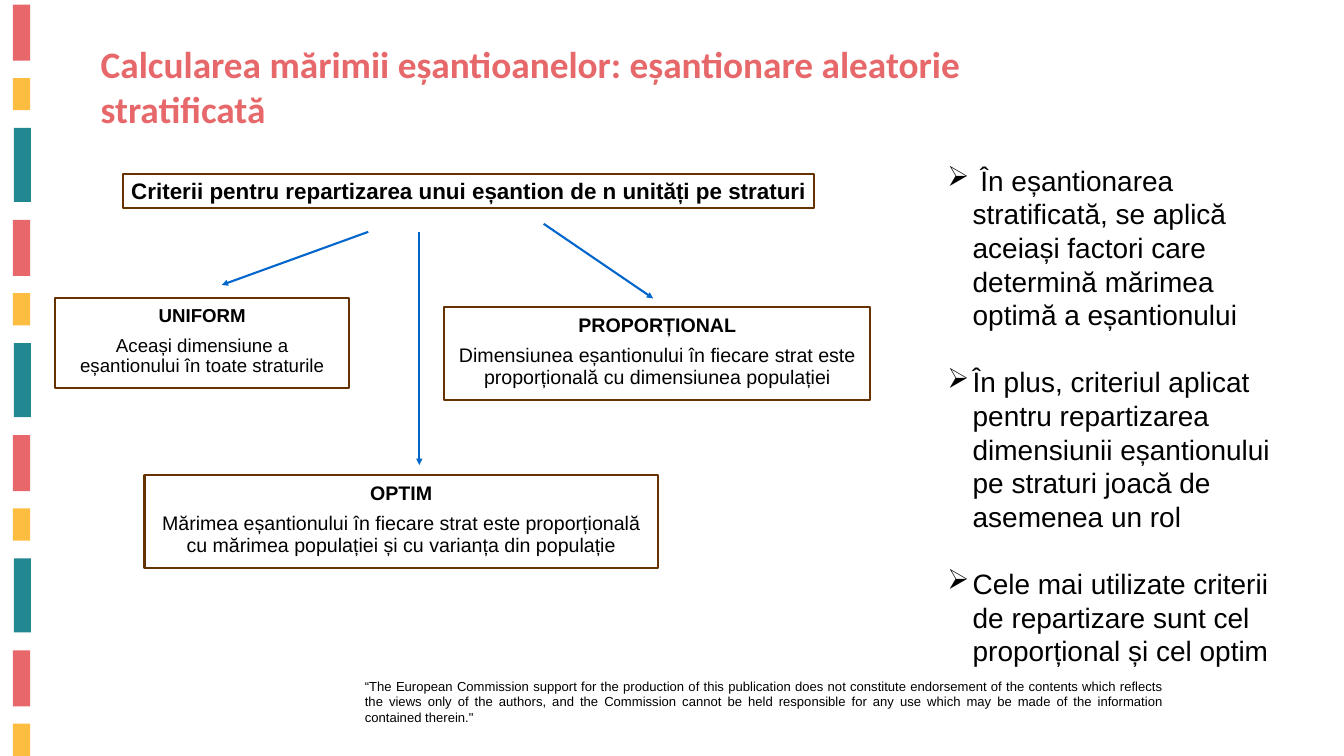
"""Build the slide on sample sizes for stratified random sampling."""
import pptx
import pptx.chart.data
import pptx.dml.color
import pptx.enum.shapes
import pptx.enum.text
import pptx.oxml
import pptx.util
from lxml import etree

Pt = pptx.util.Pt
RGBColor = pptx.dml.color.RGBColor
ALIGN = pptx.enum.text.PP_ALIGN
RECTANGLE = pptx.enum.shapes.MSO_SHAPE.RECTANGLE
A = "{http://schemas.openxmlformats.org/drawingml/2006/main}"

BLACK = RGBColor(0, 0, 0)
CORAL = RGBColor(0xE8, 0x67, 0x6A)
TITLE_CORAL = RGBColor(0xE7, 0x68, 0x6A)
YELLOW = RGBColor(0xFD, 0xBD, 0x40)
TEAL = RGBColor(0x23, 0x87, 0x91)
BROWN = RGBColor(0x66, 0x33, 0x00)
BLUE = RGBColor(0x00, 0x66, 0xCC)


def write(shape, paragraphs, size, font="Arial", color=BLACK, align=ALIGN.LEFT,
          bold_first=False, spacing=None, gap=0, inset=(7.2, 3.6), wrap=True, bullet=None):
    frame = shape.text_frame
    frame.word_wrap = wrap
    frame.vertical_anchor = pptx.enum.text.MSO_ANCHOR.TOP
    frame.margin_left = frame.margin_right = Pt(inset[0])
    frame.margin_top = frame.margin_bottom = Pt(inset[1])
    for index, text in enumerate(paragraphs):
        paragraph = frame.add_paragraph() if index else frame.paragraphs[0]
        paragraph.text = text
        paragraph.alignment = align
        if spacing:
            paragraph.line_spacing = spacing
        if index:
            paragraph.space_before = Pt(gap)
        if bullet:
            properties = paragraph._p.get_or_add_pPr()
            properties.set("marL", str(Pt(27)))
            properties.set("indent", str(-Pt(27)))
            bullet_color = etree.SubElement(properties, A + "buClr")
            etree.SubElement(bullet_color, A + "srgbClr", val=str(color))
            etree.SubElement(properties, A + "buChar", char=bullet)
        paragraph.font.size = Pt(size)
        paragraph.font.name = font
        paragraph.font.color.rgb = color
        paragraph.font.bold = bold_first and index == 0
        for run in paragraph.runs:
            run.font.size = Pt(size)
            run.font.name = font
            run.font.color.rgb = color
            run.font.bold = bold_first and index == 0


def add_rectangle(left, top, width, height, fill=None, line=None):
    rectangle = slide.shapes.add_shape(RECTANGLE, Pt(left), Pt(top), Pt(width), Pt(height))
    rectangle.shadow.inherit = False
    if fill:
        rectangle.fill.solid()
        rectangle.fill.fore_color.rgb = fill
    else:
        rectangle.fill.background()
    if line:
        rectangle.line.color.rgb = line
        rectangle.line.width = Pt(2.25)
    else:
        rectangle.line.fill.background()
    return rectangle


presentation = pptx.Presentation()
presentation.slide_width = Pt(1440)
presentation.slide_height = Pt(810)
slide = presentation.slides.add_slide(presentation.slide_layouts[6])

STRIPE_PERIOD = 230.6
for left, first_top, width, height, color, count in [
    (13.8, 5, 18.6, 60, CORAL, 4),
    (13.8, 83.6, 18.6, 34.5, YELLOW, 4),
    (15, 137, 18, 79.4, TEAL, 3),
]:
    for repeat in range(count):
        add_rectangle(left, first_top + repeat * STRIPE_PERIOD, width, height, fill=color)

disclaimer = slide.shapes.add_textbox(Pt(383.8), Pt(722.9), Pt(869.8), Pt(58.3))
write(disclaimer, [
    "“The European Commission support for the production of this publication does not "
    "constitute endorsement of the contents which reflects the views only of the authors, "
    "and the Commission cannot be held responsible for any use which may be made of the "
    "information contained therein.\""
], 14, align=ALIGN.JUSTIFY)

criteria = add_rectangle(131.8, 186.5, 740.2, 36, line=BROWN)
write(criteria, ["Criterii pentru repartizarea unui eșantion de n unități pe straturi"],
      24, align=ALIGN.CENTER, bold_first=True, wrap=False)

for left, top, width, height, size, heading, description in [
    (59, 319.7, 315.4, 95.8, 20, "UNIFORM",
     "Aceași dimensiune a eșantionului în toate straturile"),
    (154.8, 509, 550, 99.4, 21, "OPTIM",
     "Mărimea eșantionului în fiecare strat este proporțională cu mărimea populației "
     "și cu varianța din populație"),
    (476, 329, 456.5, 99.4, 21, "PROPORȚIONAL",
     "Dimensiunea eșantionului în fiecare strat este proporțională cu dimensiunea populației"),
]:
    criterion = add_rectangle(left, top, width, height, line=BROWN)
    write(criterion, [heading, description], size, align=ALIGN.CENTER, bold_first=True,
          spacing=0.9, gap=size / 2, inset=(10.8, 8.6))

for start_x, start_y, end_x, end_y in [
    (394.6, 248.4, 237.6, 305.3),
    (449.3, 248.4, 449.3, 498.2),
    (582.5, 239.8, 699.8, 319.7),
]:
    arrow = slide.shapes.add_connector(
        pptx.enum.shapes.MSO_CONNECTOR.STRAIGHT, Pt(start_x), Pt(start_y), Pt(end_x), Pt(end_y))
    arrow.line.color.rgb = BLUE
    arrow.line.width = Pt(2.25)
    etree.SubElement(arrow.line._get_or_add_ln(), A + "tailEnd", type="triangle")
    etree.SubElement(arrow._element.spPr, A + "effectLst")

title = slide.shapes.add_textbox(Pt(100.8), Pt(41), Pt(970.6), Pt(147.6))
write(title, ["Calcularea mărimii eșantioanelor: eșantionare aleatorie stratificată"],
      40, font="Calibri", color=TITLE_CORAL, bold_first=True)

conclusions = slide.shapes.add_textbox(Pt(1008), Pt(171.4), Pt(390.2), Pt(552.2))
write(conclusions, [
    " În eșantionarea stratificată, se aplică aceiași factori care determină mărimea "
    "optimă a eșantionului",
    "În plus, criteriul aplicat pentru repartizarea dimensiunii eșantionului pe straturi "
    "joacă de asemenea un rol",
    "Cele mai utilizate criterii de repartizare sunt cel proporțional și cel optim",
], 30, gap=36, bullet="➢")

presentation.save("out.pptx")
